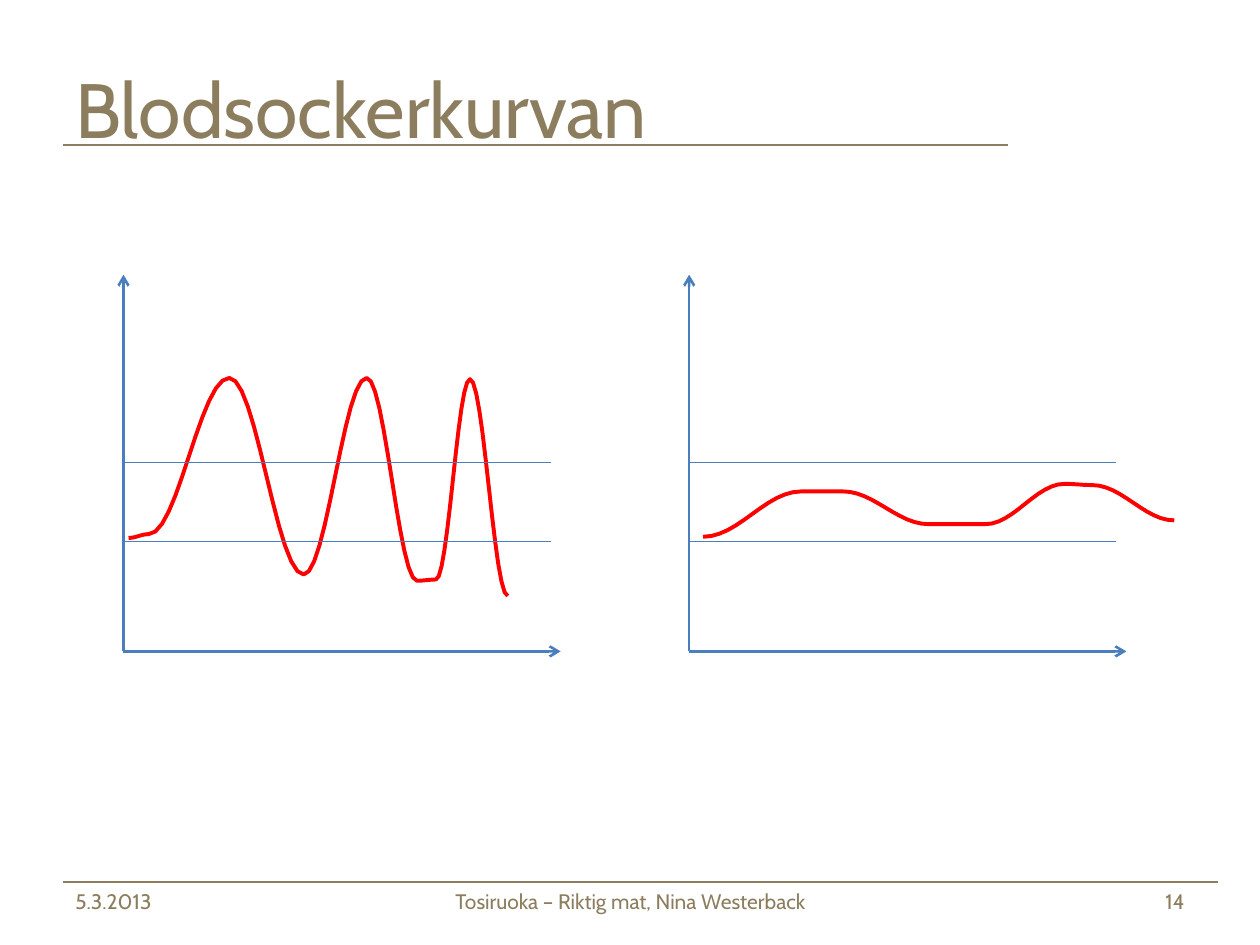
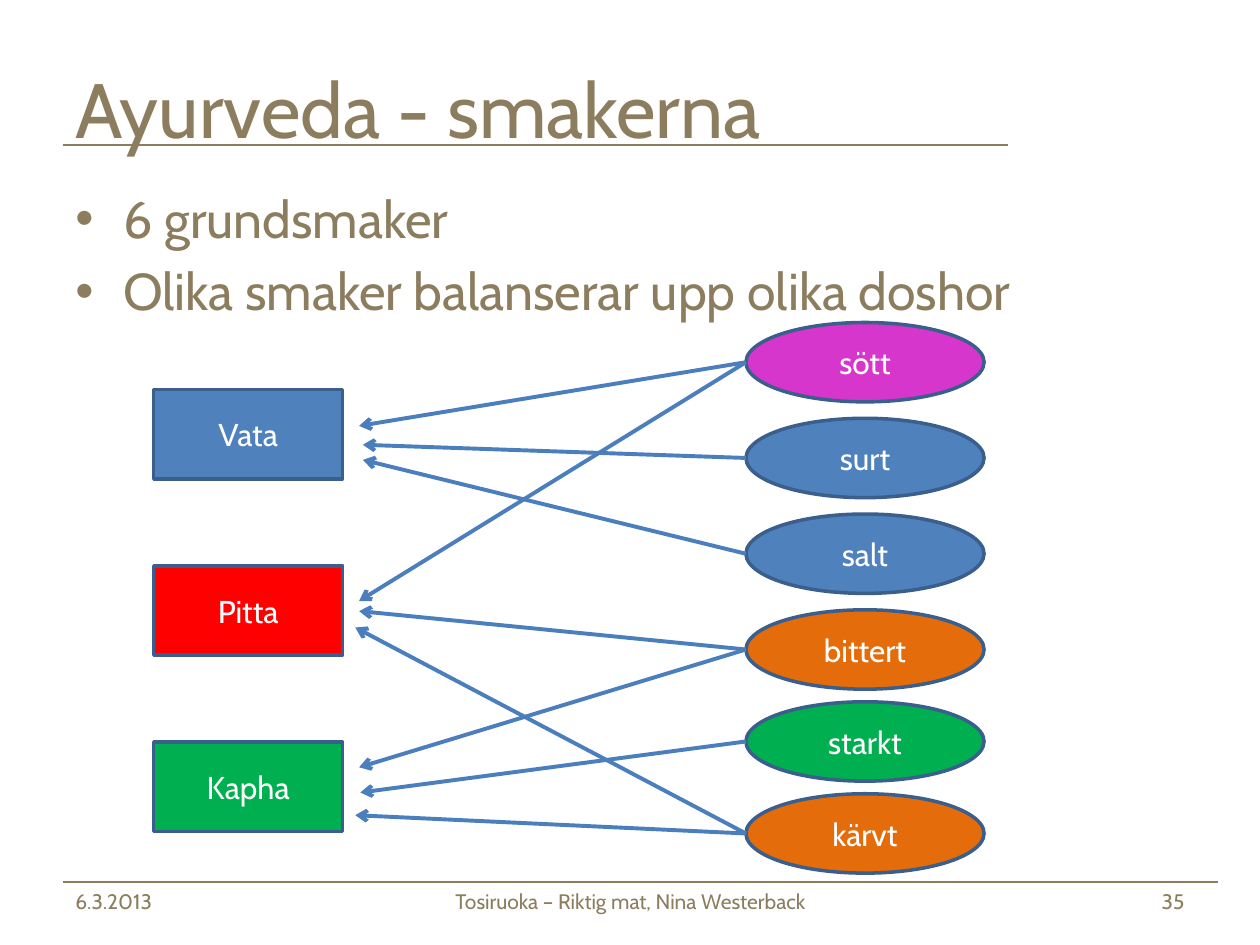
import dataclasses
import itertools
import math

import pptx
import pptx.dml.color
import pptx.enum.shapes
import pptx.enum.text
import pptx.oxml.ns
import pptx.util
from lxml import etree

COLUMNS, ROWS = 100, 75
FONT = "Cabin"
EARTH, AXIS, OUTLINE, WHITE = "8C7D5E", "4B7EBC", "3A5F8C", "FFFFFF"
BLUE, RED, GREEN, ORANGE, PINK = "4F81BD", "FF0000", "00B050", "E46C0A", "D636CB"

ALIGN = pptx.enum.text.PP_ALIGN
ANCHOR = pptx.enum.text.MSO_ANCHOR
SHAPE = pptx.enum.shapes.MSO_SHAPE

FOOTER_TEXT = "Tosiruoka – Riktig mat, Nina Westerback"

STEPS_PER_SWING = 12
UPPER_LIMIT, LOWER_LIMIT = 14.9, 21.2
UNSTABLE_TURNS = [(0.4, 20.9), (2, 20.6), (8.4, 8.2), (14.3, 23.8), (19.3, 8.2),
                  (23.3, 24.3), (24.8, 24.2), (27.5, 8.3), (30.5, 25.5)]
STEADY_TURNS = [(1.1, 20.8), (8.9, 17.2), (12.2, 17.2), (19, 19.8),
                (23.5, 19.8), (29.8, 16.6), (32, 16.7), (38.5, 19.5)]

DOSHAS = {"Vata": BLUE, "Pitta": RED, "Kapha": GREEN}
TASTES = {"sött": PINK, "surt": BLUE, "salt": BLUE,
          "bittert": ORANGE, "starkt": GREEN, "kärvt": ORANGE}
TASTE_PITCHES = [7.6, 7.6, 7.6, 7.3, 7.3]
BALANCED_BY = {
    "Vata": [("sött", 1.3, 2.9), ("surt", 1.6, 4.4), ("salt", 1.6, 5.6)],
    "Pitta": [("sött", 1.3, 2.8), ("bittert", 1.3, 3.6), ("kärvt", 1, 4.9)],
    "Kapha": [("bittert", 1.3, 2), ("starkt", 1.4, 4), ("kärvt", 1, 5.8)],
}

deck = pptx.Presentation()
deck.slide_width = pptx.util.Inches(10)
deck.slide_height = pptx.util.Inches(7.5)


@dataclasses.dataclass
class Box:
    left: float
    top: float
    width: float
    height: float

    def inner(self, left, top, width, height):
        return Box(self.left + left, self.top + top, width, height)

    def point(self, x, y):
        return self.left + x, self.top + y

    def emu(self):
        return (*to_emu(self.left, self.top), *to_emu(self.width, self.height))


def to_emu(x, y):
    return round(x * deck.slide_width / COLUMNS), round(y * deck.slide_height / ROWS)


def colour(value):
    return pptx.dml.color.RGBColor.from_string(value)


def add_element(parent, tag, **attributes):
    return etree.SubElement(parent, pptx.oxml.ns.qn(tag), **attributes)


def style_line(line, value, weight):
    line.color.rgb = colour(value)
    line.width = pptx.util.Pt(weight)


def style_text(paragraph, size, value, align=ALIGN.LEFT):
    paragraph.alignment = align
    for run in paragraph.runs:
        run.font.name = FONT
        run.font.size = pptx.util.Pt(size)
        run.font.color.rgb = colour(value)


def add_text(slide, box, lines, size, align=ALIGN.LEFT, anchor=ANCHOR.MIDDLE):
    frame = slide.shapes.add_textbox(*box.emu()).text_frame
    frame.word_wrap = True
    frame.vertical_anchor = anchor
    frame.text = "\n".join(lines)
    for paragraph in frame.paragraphs:
        style_text(paragraph, size, EARTH, align)
    return frame


def add_line(slide, start, end, value, weight, arrow=False):
    connector = slide.shapes.add_connector(
        pptx.enum.shapes.MSO_CONNECTOR.STRAIGHT, *to_emu(*start), *to_emu(*end))
    style_line(connector.line, value, weight)
    outline = connector._element.spPr
    if arrow:
        add_element(outline.find(pptx.oxml.ns.qn("a:ln")), "a:tailEnd", type="arrow")
    add_element(outline, "a:effectLst")


def add_node(slide, kind, box, label, fill):
    node = slide.shapes.add_shape(kind, *box.emu())
    node.shadow.inherit = False
    node.fill.solid()
    node.fill.fore_color.rgb = colour(fill)
    style_line(node.line, OUTLINE, 2)
    node.text_frame.text = label
    node.text_frame.vertical_anchor = ANCHOR.MIDDLE
    style_text(node.text_frame.paragraphs[0], 18, WHITE, ALIGN.CENTER)


def add_header(slide, box, title):
    rule_top = 8.55
    add_text(slide, box.inner(0, 0, 72.5, box.height), [title], 44)
    add_line(slide, box.point(box.width, rule_top), box.point(0, rule_top), EARTH, 0.7)


def add_footer(slide, box, date, number):
    rule_top = 0.5
    fields = [(0, 23.3, date, ALIGN.LEFT), (26.7, 36.7, FOOTER_TEXT, ALIGN.CENTER),
              (66.7, 23.3, number, ALIGN.RIGHT)]
    for left, width, text, align in fields:
        add_text(slide, box.inner(left, 0, width, box.height), [text], 12, align)
    add_line(slide, box.point(box.width, rule_top), box.point(0, rule_top), EARTH, 0.7)


def add_framed_slide(title, date, number):
    slide = deck.slides.add_slide(deck.slide_layouts[6])
    add_header(slide, Box(5, 2.95, 75, 11.2), title)
    add_footer(slide, Box(5, 69.5, 91.7, 4), date, number)
    return slide


def add_bullets(slide, box, lines):
    frame = add_text(slide, box, lines, 29.6, anchor=ANCHOR.TOP)
    indent = pptx.util.Inches(0.38)
    for index, paragraph in enumerate(frame.paragraphs):
        properties = paragraph._p.get_or_add_pPr()
        properties.set("marL", str(indent))
        properties.set("indent", str(-indent))
        add_element(properties, "a:buFont", typeface="Arial")
        add_element(properties, "a:buChar", char="•")
        if index:
            paragraph.space_before = pptx.util.Pt(6)


def swing_between(turns):
    yield turns[0]
    for (x1, y1), (x2, y2) in itertools.pairwise(turns):
        for step in range(1, STEPS_PER_SWING + 1):
            progress = step / STEPS_PER_SWING
            eased = (1 - math.cos(math.pi * progress)) / 2
            yield x1 + (x2 - x1) * progress, y1 + (y2 - y1) * eased


def add_sugar_curve(slide, box, turns):
    start, *rest = [to_emu(*box.point(x, y)) for x, y in swing_between(turns)]
    builder = slide.shapes.build_freeform(*start)
    builder.add_line_segments(rest, close=False)
    sugar = builder.convert_to_shape()
    sugar.shadow.inherit = False
    sugar.fill.background()
    style_line(sugar.line, RED, 2.25)


def add_sugar_plot(slide, box, turns):
    origin = box.point(0, box.height)
    for axis_end in (box.point(0, 0), box.point(box.width, box.height)):
        add_line(slide, origin, axis_end, AXIS, 1.5, arrow=True)
    add_sugar_curve(slide, box, turns)
    for limit in (LOWER_LIMIT, UPPER_LIMIT):
        add_line(slide, box.point(0, limit), box.point(33.9, limit), AXIS, 0.75)


def add_taste_map(slide, box):
    dosha_width, dosha_height, dosha_pitch, first_dosha = 15, 7.1, 14, 5.3
    taste_width, taste_height = 18.9, 6.3
    taste_left = box.width - taste_width
    dosha_tops = dict(zip(DOSHAS, itertools.count(first_dosha, dosha_pitch)))
    taste_tops = dict(zip(TASTES, itertools.accumulate(TASTE_PITCHES, initial=0)))

    for dosha, fill in DOSHAS.items():
        place = box.inner(0, dosha_tops[dosha], dosha_width, dosha_height)
        add_node(slide, SHAPE.RECTANGLE, place, dosha, fill)
    for taste, fill in TASTES.items():
        place = box.inner(taste_left, taste_tops[taste], taste_width, taste_height)
        add_node(slide, SHAPE.OVAL, place, taste, fill)
    for dosha, arrows in BALANCED_BY.items():
        for taste, gap, drop in arrows:
            start = box.point(taste_left, taste_tops[taste] + taste_height / 2)
            tip = box.point(dosha_width + gap, dosha_tops[dosha] + drop)
            add_line(slide, start, tip, AXIS, 2.25, arrow=True)


def build_blood_sugar():
    slide = add_framed_slide("Blodsockerkurvan", "5.3.2013", "14")
    for left, turns in ((9.8, UNSTABLE_TURNS), (54.7, STEADY_TURNS)):
        add_sugar_plot(slide, Box(left, 21.8, 34.7, 29.9), turns)


def build_tastes():
    slide = add_framed_slide("Ayurveda - smakerna", "6.3.2013", "35")
    add_bullets(slide, Box(5, 14.3, 90, 11.4),
                ["6 grundsmaker", "Olika smaker balanserar upp olika doshor"])
    add_taste_map(slide, Box(12.2, 25.6, 65.9, 43.7))


def main():
    build_blood_sugar()
    build_tastes()
    deck.save("out.pptx")


if __name__ == "__main__":
    main()
